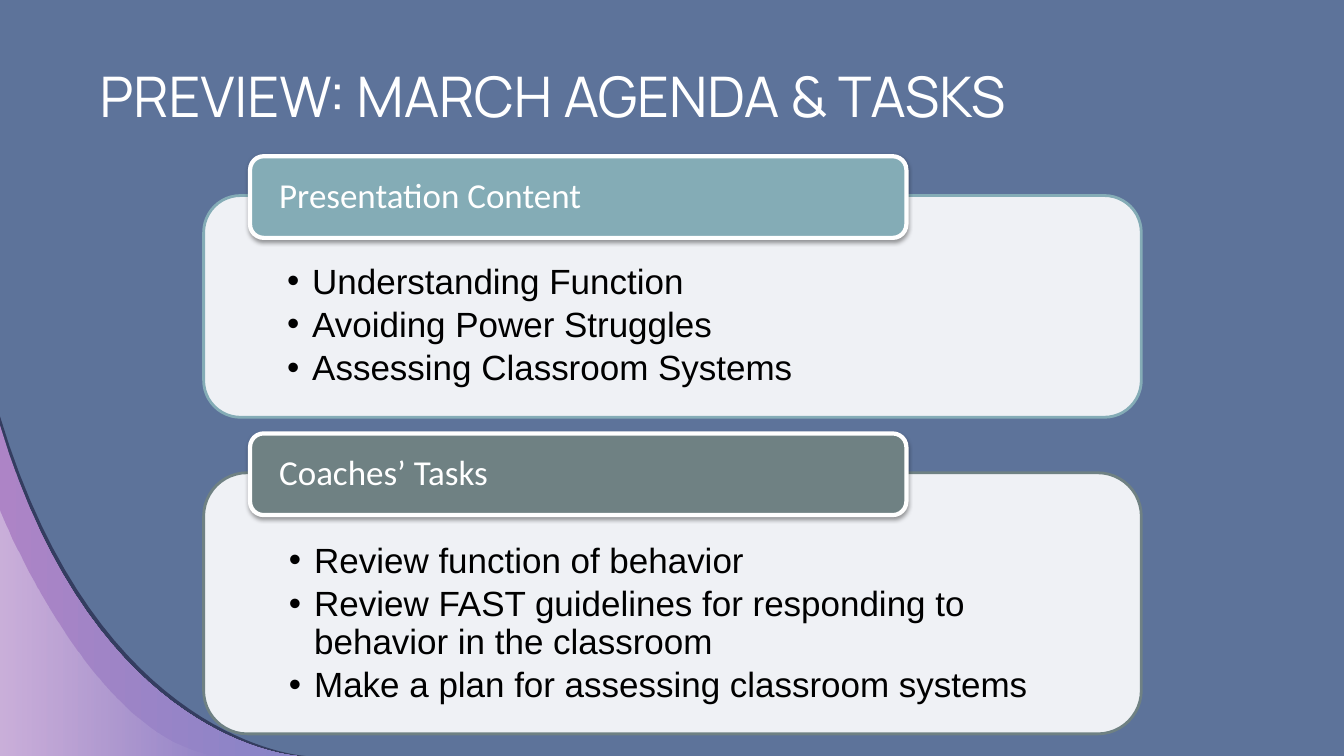
from pptx import Presentation
from pptx.dml.color import RGBColor
from pptx.enum.shapes import MSO_SHAPE as Shape
from pptx.enum.text import MSO_ANCHOR as Anchor, PP_ALIGN as Align
from pptx.oxml import parse_xml
from pptx.oxml.ns import nsdecls
from pptx.util import Pt

PX = 9144  # 100 px to the inch
SLIDE_W, SLIDE_H = 1333, 750
CURVE_STEPS = 32
WHITE, BLACK = "FFFFFF", "000000"

SECTIONS = [
    ("Presentation Content", "84ACB6", (202, 155, 930, 259),
     ["Understanding Function",
      "Avoiding Power Struggles",
      "Assessing Classroom Systems"]),
    ("Coaches’ Tasks", "6F8183", (202, 430, 930, 298),
     ["Review function of behavior",
      "Review FAST guidelines for responding to behavior in the classroom",
      "Make a plan for assessing classroom systems"]),
]

# Curve from the left edge to the bottom edge, fill colours, opacities in percent
SWOOSHES = [
    ([(0, 413), (98, 739), (303, 750), (303, 750)], ["12102F"], [54]),
    ([(0, 422), (95, 739), (295, 750), (295, 750)], ["AD84C6", "8784C7"], [100, 100]),
    ([(0, 506), (0, 506), (91, 735), (216, 750)], [WHITE, WHITE], [36, 0]),
]


def px(*lengths):
    return [round(length * PX) for length in lengths]


def rgb(color):
    return RGBColor.from_string(color)


def set_opacity(shape, percents):
    colors = shape._element.spPr.xpath("./a:solidFill/a:srgbClr | ./a:gradFill//a:srgbClr")
    for color, percent in zip(colors, percents):
        color.append(parse_xml(f'<a:alpha {nsdecls("a")} val="{percent * 1000}"/>'))


def add_drop_shadow(shape):
    effects = shape._element.spPr.xpath("./a:effectLst")[0]
    effects.append(parse_xml(
        f'<a:outerShdw {nsdecls("a")} blurRad="40000" dist="20000" dir="5400000" rotWithShape="0">'
        '<a:srgbClr val="000000"><a:alpha val="38000"/></a:srgbClr></a:outerShdw>'))


def set_frame(frame, insets, anchor):
    frame.word_wrap = True
    frame.vertical_anchor = anchor
    (frame.margin_left, frame.margin_top,
     frame.margin_right, frame.margin_bottom) = px(*insets)


def add_run(paragraph, text, size, font, color):
    paragraph.alignment = Align.LEFT
    run = paragraph.add_run()
    run.text = text
    run.font.size = Pt(size)
    run.font.name = font
    run.font.color.rgb = rgb(color)


def add_bullet(paragraph):
    props = paragraph._p.get_or_add_pPr()
    indent, = px(25)
    props.set("marL", str(indent))
    props.set("indent", str(-indent))
    props.append(parse_xml(f'<a:buFont {nsdecls("a")} typeface="Arial"/>'))
    props.append(parse_xml(f'<a:buChar {nsdecls("a")} char="•"/>'))


def curve_points(start, pull_start, pull_end, end):
    """Points along a cubic Bezier curve."""
    for step in range(CURVE_STEPS + 1):
        t = step / CURVE_STEPS
        weights = ((1 - t) ** 3, 3 * t * (1 - t) ** 2, 3 * t ** 2 * (1 - t), t ** 3)
        corners = (start, pull_start, pull_end, end)
        yield tuple(sum(w * corner[axis] for w, corner in zip(weights, corners))
                    for axis in (0, 1))


def add_swoosh(slide, curve, colors, opacities):
    points = [px(*point) for point in curve_points(*curve)]
    builder = slide.shapes.build_freeform(*px(0, SLIDE_H), scale=1)
    builder.add_line_segments(points, close=True)
    swoosh = builder.convert_to_shape()
    swoosh.shadow.inherit = False
    swoosh.line.fill.background()
    if len(colors) == 1:
        swoosh.fill.solid()
        swoosh.fill.fore_color.rgb = rgb(colors[0])
    else:
        swoosh.fill.gradient()
        swoosh.fill.gradient_angle = 0
        for stop, color, position in zip(swoosh.fill.gradient_stops, colors, (0, 1)):
            stop.color.rgb = rgb(color)
            stop.position = position
    set_opacity(swoosh, opacities)


def add_title(slide, box, text):
    title = slide.shapes.add_textbox(*px(*box))
    set_frame(title.text_frame, (10, 10, 10, 10), Anchor.TOP)
    add_run(title.text_frame.paragraphs[0], text, 40, "Manrope", WHITE)


def add_panel(slide, box, fill, line, line_width):
    panel = slide.shapes.add_shape(Shape.ROUNDED_RECTANGLE, *px(*box))
    panel.shadow.inherit = False
    panel.fill.solid()
    panel.fill.fore_color.rgb = rgb(fill)
    panel.line.color.rgb = rgb(line)
    panel.line.width = Pt(line_width)
    return panel


def add_section(slide, box, heading, color, items):
    """A bulleted panel with a heading tab over its top edge."""
    left, top, width, height = box
    tab_height, panel_drop = 81, 39

    panel = add_panel(slide, (left, top + panel_drop, width, height - panel_drop),
                      WHITE, color, 2)
    set_opacity(panel, [90])
    frame = panel.text_frame
    set_frame(frame, (72, 57, 72, 19), Anchor.TOP)
    for index, item in enumerate(items):
        paragraph = frame.add_paragraph() if index else frame.paragraphs[0]
        paragraph.line_spacing = 0.9
        paragraph.space_after = Pt(4)
        add_run(paragraph, item, 25, "Arial", BLACK)
        add_bullet(paragraph)

    tab = add_panel(slide, (left + 46, top, width * 0.7, tab_height), color, WHITE, 3)
    add_drop_shadow(tab)
    set_frame(tab.text_frame, (25, 0, 25, 0), Anchor.MIDDLE)
    label = tab.text_frame.paragraphs[0]
    label.line_spacing = 0.9
    add_run(label, heading, 25, "Calibri", WHITE)


def main():
    deck = Presentation()
    deck.slide_width, deck.slide_height = px(SLIDE_W, SLIDE_H)
    slide = deck.slides.add_slide(deck.slide_layouts[6])
    slide.background.fill.solid()
    slide.background.fill.fore_color.rgb = rgb("5D739A")

    for curve, colors, opacities in SWOOSHES:
        add_swoosh(slide, curve, colors, opacities)
    for heading, color, box, items in SECTIONS:
        add_section(slide, box, heading, color, items)
    add_title(slide, (89, 51, 1123, 92), "PREVIEW: MARCH AGENDA & TASKS")
    deck.save("out.pptx")


if __name__ == "__main__":
    main()
